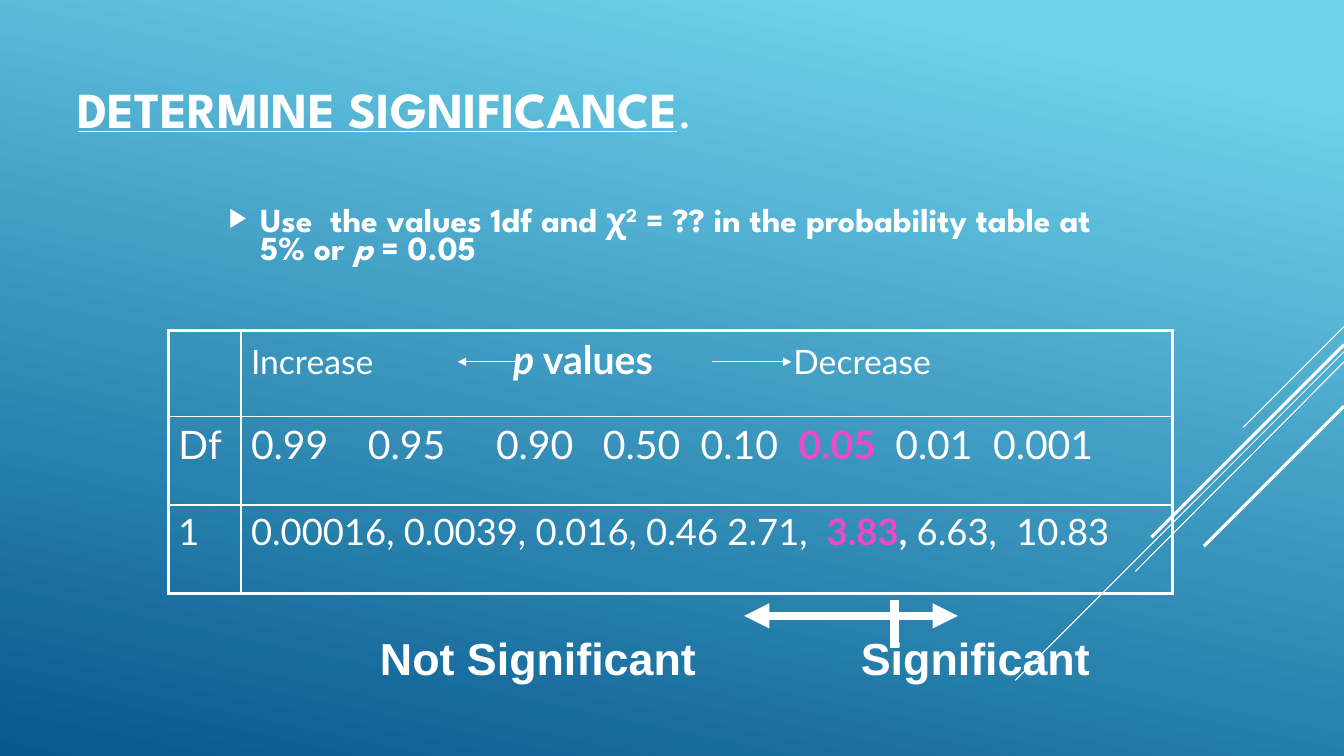
from lxml import etree
from pptx import Presentation
from pptx.dml.color import RGBColor
from pptx.enum.shapes import MSO_CONNECTOR
from pptx.enum.text import MSO_ANCHOR, MSO_AUTO_SIZE, PP_ALIGN
from pptx.oxml.ns import qn
from pptx.util import Inches, Pt

STRAIGHT = MSO_CONNECTOR.STRAIGHT
TOP, MIDDLE = MSO_ANCHOR.TOP, MSO_ANCHOR.MIDDLE
NO_FIT = MSO_AUTO_SIZE.NONE
LEFT = PP_ALIGN.LEFT

WHITE = RGBColor(0xFF, 0xFF, 0xFF)
PINK = RGBColor(0xEF, 0x48, 0xC9)
SKY = RGBColor(0x6E, 0xD2, 0xEB)
NAVY = RGBColor(0x06, 0x58, 0x8E)

HEADING_FONT, SYMBOL_FONT = "League Spartan", "Open Sans"
TABLE_FONT, LABEL_FONT = "Lato", "Arial"

BOLD = {"bold": True}
KEY = {"bold": True, "color": PINK}
COLUMNS = [0.72, 9.24]
ROWS = [0.85, 0.88, 0.88]
P_TABS = [1.16, 2.43, 3.49, 4.46, 5.43, 6.39, 7.36]

DECORATION = [
    (3.24, 12.33, 4.24, 0.75),
    (3.49, 10.07, 6.75, 0.75),
    (3.59, 11.26, 5.67, 0.75),
    (3.42, 11.42, 5.33, 2.25),
    (4.03, 11.94, 5.42, 2.25),
]
ARROWS = [
    (5.17, 3.59, 4.54, 3.59, 0.75),
    (7.06, 3.59, 7.85, 3.59, 0.75),
    (8.87, 6.11, 7.38, 6.11, 6),
    (8.87, 6.11, 9.5, 6.11, 6),
]


def add_child(parent, tag, **attrs):
    """Append a drawing element with the given attributes."""
    child = etree.SubElement(parent, qn(tag))
    for name, value in attrs.items():
        child.set(name, str(value))
    return child


def style(font, size=None, name=None, color=None, bold=None, italic=None, underline=None):
    """Apply the given font settings, leaving the rest inherited."""
    if size:
        font.size = Pt(size)
    if name:
        font.name = name
    if color is not None:
        font.color.rgb = color
    for key, value in (("bold", bold), ("italic", italic), ("underline", underline)):
        if value is not None:
            setattr(font, key, value)


def write(p, runs, tabs=(), **font):
    """Fill a paragraph with styled runs and tab stops."""
    p.alignment = LEFT
    if tabs:
        tab_list = add_child(p._p.get_or_add_pPr(), "a:tabLst")
        for tab in tabs:
            add_child(tab_list, "a:tab", pos=Inches(tab), algn="l")
    style(p.font, **font)
    for text, own in runs:
        r = p.add_run()
        r.text = text
        style(r.font, **own)


def add_line(s, x1, y1, x2, y2, width, arrow=False):
    """Draw a white line, with an arrowhead at its end if asked."""
    line = s.shapes.add_connector(STRAIGHT, Inches(x1), Inches(y1), Inches(x2), Inches(y2))
    line.line.color.rgb = WHITE
    line.line.width = Pt(width)
    if arrow:
        add_child(line.line._get_or_add_ln(), "a:tailEnd", type="triangle")
    add_child(line._element.spPr, "a:effectLst")


def place(sp, left, top, width, height, anchor):
    """Position a placeholder and return its text frame."""
    sp.left, sp.top = Inches(left), Inches(top)
    sp.width, sp.height = Inches(width), Inches(height)
    tf = sp.text_frame
    tf.auto_size = NO_FIT
    tf.vertical_anchor = anchor
    return tf


def add_title(s):
    """Write the slide title."""
    tf = place(s.shapes.title, 0.67, 0.32, 12, 1.51, MIDDLE)
    runs = [("DETERMINE SIGNIFICANCE", {"bold": True, "underline": True}),
            (".", {"bold": False})]
    write(tf.paragraphs[0], runs, size=36, name=HEADING_FONT, color=WHITE)


def add_instruction(s):
    """Write the bulleted instruction."""
    tf = place(s.placeholders[1], 2.17, 2.08, 8.75, 0.82, TOP)
    tf.margin_top = 0
    p = tf.paragraphs[0]
    pPr = p._p.get_or_add_pPr()
    pPr.set("marL", str(Inches(0.31)))
    pPr.set("indent", str(Inches(-0.31)))
    add_child(add_child(pPr, "a:buClr"), "a:srgbClr", val=WHITE)
    add_child(pPr, "a:buSzPct", val=80000)
    add_child(pPr, "a:buChar", char="▶")
    p.line_spacing = 0.7
    p.space_before, p.space_after = Pt(5), Pt(6)
    heading = {"name": HEADING_FONT}
    runs = [("Use  the values 1df and ", heading), ("χ", {"name": SYMBOL_FONT}), ("2", heading),
            (" = ?? in the probability table at 5% or ", heading),
            ("p ", {"name": HEADING_FONT, "italic": True}), ("= 0.05", heading)]
    write(p, runs, size=24, color=WHITE, bold=True)
    p.runs[2]._r.get_or_add_rPr().set("baseline", "30000")


def add_border(cell, row, col):
    """Give a cell thick outer and thin inner borders."""
    last_row, last_col = len(ROWS) - 1, len(COLUMNS) - 1
    edges = {"a:lnL": col == 0, "a:lnR": col == last_col,
             "a:lnT": row == 0, "a:lnB": row == last_row}
    for tag, outer in edges.items():
        ln = add_child(cell._tc.get_or_add_tcPr(), tag, w=Pt(2.25 if outer else 1))
        add_child(add_child(ln, "a:solidFill"), "a:srgbClr", val=WHITE)


def add_probability_table(s):
    """Build the table of p values and chi-squared values."""
    table = s.shapes.add_table(len(ROWS), len(COLUMNS), Inches(1.67), Inches(3.28),
                               Inches(sum(COLUMNS)), Inches(sum(ROWS))).table
    table.first_row = table.horz_banding = False
    for column, width in zip(table.columns, COLUMNS):
        column.width = Inches(width)
    for row, height in zip(table.rows, ROWS):
        row.height = Inches(height)
    header = [("Increase\t", {"size": 24}), ("p", {"size": 28, "bold": True, "italic": True}),
              (" values", {"size": 28, "bold": True}), ("\tDecrease", {"size": 24})]
    p_values = [("0.99\t0.95\t0.90\t0.50\t0.10\t", {}), ("0.05", KEY), ("\t0.01\t0.001", {})]
    chi_values = [("0.00016, 0.0039, 0.016, 0.46 2.71,\t", {}), ("3.83", KEY),
                  (",", BOLD), (" 6.63,\t10.83", {})]
    content = [
        [([], (), 28), (header, [2.6, 5.38], 28)],
        [([("Df", {})], (), 28), (p_values, P_TABS, 28)],
        [([("1", {})], (), 26), (chi_values, [5.71, 7.59], 26)],
    ]
    for i, row in enumerate(content):
        for j, (runs, tabs, size) in enumerate(row):
            cell = table.cell(i, j)
            add_border(cell, i, j)
            cell.fill.background()
            p = cell.text_frame.paragraphs[0]
            p.space_before = Pt(5)
            write(p, runs, tabs, size=size, name=TABLE_FONT, color=WHITE)


def add_verdict(s):
    """Label the two sides of the critical value."""
    tf = s.shapes.add_textbox(Inches(1.94), Inches(6.21), Inches(9.53), Inches(0.63)).text_frame
    tf.word_wrap = True
    write(tf.paragraphs[0], [("\tNot Significant\tSignificant", {})], [1.73, 6.5],
          size=32, name=LABEL_FONT, color=WHITE, bold=True)


def set_background(s):
    """Fill the background with a blue gradient."""
    fill = s.background.fill
    fill.gradient()
    fill.gradient_angle = 258
    for stop, color, position in zip(fill.gradient_stops, (SKY, NAVY), (0.1, 1)):
        stop.color.rgb = color
        stop.position = position


def main():
    """Build and save the slide."""
    prs = Presentation()
    prs.slide_width, prs.slide_height = Inches(13.33), Inches(7.5)
    s = prs.slides.add_slide(prs.slide_layouts[1])
    set_background(s)
    for y1, x2, y2, width in DECORATION:
        add_line(s, 13.33, y1, x2, y2, width)
    add_title(s)
    add_instruction(s)
    add_probability_table(s)
    add_verdict(s)
    for arrow in ARROWS:
        add_line(s, *arrow, arrow=True)
    add_line(s, 8.87, 5.95, 8.87, 6.43, 6)
    prs.save("out.pptx")


if __name__ == "__main__":
    main()
